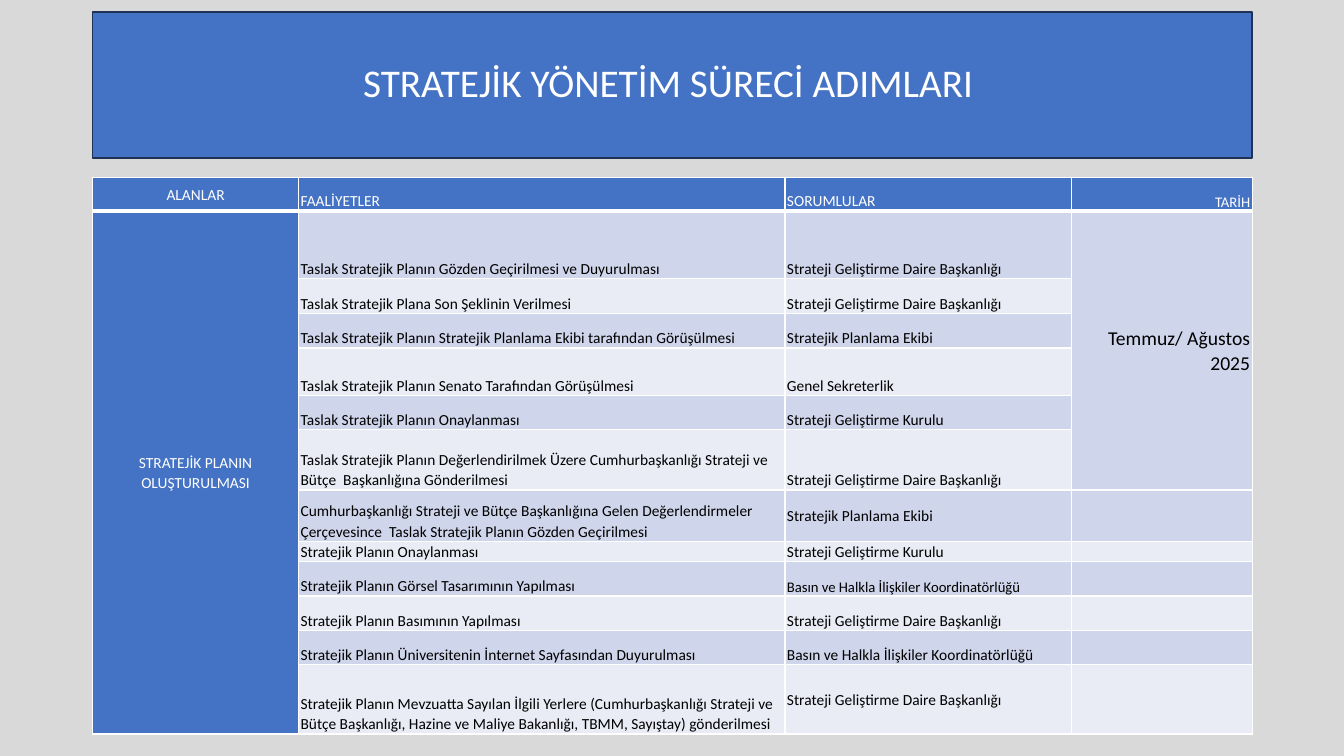
from lxml.etree import SubElement
from pptx import Presentation
from pptx.dml.color import RGBColor
from pptx.enum.text import MSO_ANCHOR, MSO_AUTO_SIZE, PP_ALIGN
from pptx.oxml.ns import qn
from pptx.util import Inches, Pt

TITLE = "STRATEJİK YÖNETİM SÜRECİ ADIMLARI "
HEADERS = ["ALANLAR", "FAALİYETLER", "SORUMLULAR", "TARİH"]
AREA = "STRATEJİK PLANIN OLUŞTURULMASI"
DATE = "Temmuz/ Ağustos 2025"
DATE_ROWS = 6

STRATEGY_OFFICE = "Strateji Geliştirme Daire Başkanlığı"
STRATEGY_BOARD = "Strateji Geliştirme Kurulu"
PLANNING_TEAM = "Stratejik Planlama Ekibi"
PRESS_OFFICE = "Basın ve Halkla İlişkiler Koordinatörlüğü"
ACTIVITIES = [
    ("Taslak Stratejik Planın Gözden Geçirilmesi ve Duyurulması", STRATEGY_OFFICE),
    ("Taslak Stratejik Plana Son Şeklinin Verilmesi", STRATEGY_OFFICE),
    ("Taslak Stratejik Planın Stratejik Planlama Ekibi tarafından Görüşülmesi", PLANNING_TEAM),
    ("Taslak Stratejik Planın Senato Tarafından Görüşülmesi", "Genel Sekreterlik"),
    ("Taslak Stratejik Planın Onaylanması", STRATEGY_BOARD),
    ("Taslak Stratejik Planın Değerlendirilmek Üzere Cumhurbaşkanlığı Strateji ve "
     "Bütçe  Başkanlığına Gönderilmesi", STRATEGY_OFFICE),
    ("Cumhurbaşkanlığı Strateji ve Bütçe Başkanlığına Gelen Değerlendirmeler "
     "Çerçevesince  Taslak Stratejik Planın Gözden Geçirilmesi", PLANNING_TEAM),
    ("Stratejik Planın Onaylanması", STRATEGY_BOARD),
    ("Stratejik Planın Görsel Tasarımının Yapılması", PRESS_OFFICE),
    ("Stratejik Planın Basımının Yapılması", STRATEGY_OFFICE),
    ("Stratejik Planın Üniversitenin İnternet Sayfasından Duyurulması", PRESS_OFFICE),
    ("Stratejik Planın Mevzuatta Sayılan İlgili Yerlere (Cumhurbaşkanlığı Strateji ve "
     "Bütçe Başkanlığı, Hazine ve Maliye Bakanlığı, TBMM, Sayıştay) gönderilmesi",
     STRATEGY_OFFICE),
]
# Relative sizes, shared out over the table's width and height
COLUMN_WEIGHTS = [2.04, 4.82, 2.84, 1.79]
ROW_WEIGHTS = [0.33, 0.67, 0.35, 0.34, 0.47, 0.34, 0.6, 0.51, 0.19, 0.34, 0.34, 0.34, 0.69]


def color(value):
    return RGBColor.from_string(value)


class SlideBuilder:
    FONT = "Calibri"
    BLUE, NAVY, WHITE, BLACK = "4472C4", "1E3256", "FFFFFF", "000000"
    BANDS = ["CFD5EA", "E9EBF5"]
    BACKGROUND = "D9D9D9"

    def __init__(self, presentation):
        self.width, self.height = presentation.slide_width, presentation.slide_height
        self.slide = presentation.slides.add_slide(presentation.slide_layouts[5])
        fill = self.slide.background.fill
        fill.solid()
        fill.fore_color.rgb = color(self.BACKGROUND)

    def box(self, left, top, width, height):
        """Turn percentages of the slide into lengths."""
        return (int(self.width * left / 100), int(self.height * top / 100),
                int(self.width * width / 100), int(self.height * height / 100))

    def style(self, paragraph, size, ink, align, spacing):
        paragraph.alignment = align
        paragraph.line_spacing = spacing
        font = paragraph.font
        font.name, font.size, font.bold = self.FONT, Pt(size), False
        font.color.rgb = color(ink)

    def title(self, text, box):
        shape = self.slide.shapes.title
        shape.left, shape.top, shape.width, shape.height = box
        shape.fill.solid()
        shape.fill.fore_color.rgb = color(self.BLUE)
        shape.line.color.rgb = color(self.NAVY)
        shape.line.width = Pt(1)
        frame = shape.text_frame
        frame.text = text
        frame.auto_size = MSO_AUTO_SIZE.NONE
        frame.vertical_anchor = MSO_ANCHOR.MIDDLE
        self.style(frame.paragraphs[0], 28, self.WHITE, PP_ALIGN.CENTER, 0.9)

    def table(self, column_weights, row_weights, box):
        shape = self.slide.shapes.add_table(len(row_weights), len(column_weights), *box)
        table = shape.table
        table.first_row = table.horz_banding = False
        for column, weight in zip(table.columns, column_weights):
            column.width = int(box[2] * weight / sum(column_weights))
        for row, weight in zip(table.rows, row_weights):
            row.height = int(box[3] * weight / sum(row_weights))
        return table

    def border(self, cell, side, width):
        line = SubElement(cell._tc.get_or_add_tcPr(), qn(f"a:{side}"), w=str(Pt(width)))
        fill = SubElement(line, qn("a:solidFill"))
        SubElement(fill, qn("a:srgbClr"), val=self.WHITE)

    def cell(self, cell, text, fill, ink=BLACK, size=11, align=PP_ALIGN.LEFT,
             anchor=MSO_ANCHOR.BOTTOM, bottom=1):
        cell.margin_left = cell.margin_right = Inches(0.02)
        cell.margin_top = cell.margin_bottom = 0
        cell.vertical_anchor = anchor
        for side, width in [("lnL", 1), ("lnR", 1), ("lnT", 1), ("lnB", bottom)]:
            self.border(cell, side, width)
        cell.fill.solid()
        cell.fill.fore_color.rgb = color(fill)
        paragraph = cell.text_frame.paragraphs[0]
        self.style(paragraph, size, ink, align, 1.07)
        if text:
            paragraph.add_run().text = text
        else:
            # Keep empty cells from stretching their row
            SubElement(paragraph._p, qn("a:endParaRPr"), sz="1000")


def main():
    presentation = Presentation()
    presentation.slide_width, presentation.slide_height = Inches(13.33), Inches(7.5)
    builder = SlideBuilder(presentation)

    # Title banner
    builder.title(TITLE, builder.box(6.9, 1.6, 86.27, 19.33))

    # Table header
    table = builder.table(COLUMN_WEIGHTS, ROW_WEIGHTS, builder.box(6.9, 23.5, 86.27, 73.47))
    aligns = [PP_ALIGN.CENTER, PP_ALIGN.LEFT, PP_ALIGN.LEFT, PP_ALIGN.RIGHT]
    for column, (text, align) in enumerate(zip(HEADERS, aligns)):
        builder.cell(table.cell(0, column), text, builder.BLUE, builder.WHITE,
                     size=10.5 if text == "TARİH" else 11, align=align, bottom=3,
                     anchor=MSO_ANCHOR.BOTTOM if column else MSO_ANCHOR.MIDDLE)

    # Activities, with the area and date columns around them
    centred_rows = (7, 12)
    for row, (activity, owner) in enumerate(ACTIVITIES, start=1):
        band = builder.BANDS[(row - 1) % 2]
        first = row == 1
        builder.cell(table.cell(row, 0), AREA if first else "", builder.BLUE, builder.WHITE,
                     align=PP_ALIGN.CENTER, anchor=MSO_ANCHOR.MIDDLE)
        builder.cell(table.cell(row, 1), activity, band)
        builder.cell(table.cell(row, 2), owner, band, size=10.5 if row == 9 else 11,
                     anchor=MSO_ANCHOR.MIDDLE if row in centred_rows else MSO_ANCHOR.BOTTOM)
        builder.cell(table.cell(row, 3), DATE if first else "", band, size=14,
                     align=PP_ALIGN.RIGHT, anchor=MSO_ANCHOR.MIDDLE)
    table.cell(1, 0).merge(table.cell(len(ACTIVITIES), 0))
    table.cell(1, 3).merge(table.cell(DATE_ROWS, 3))

    presentation.save("out.pptx")


if __name__ == "__main__":
    main()
